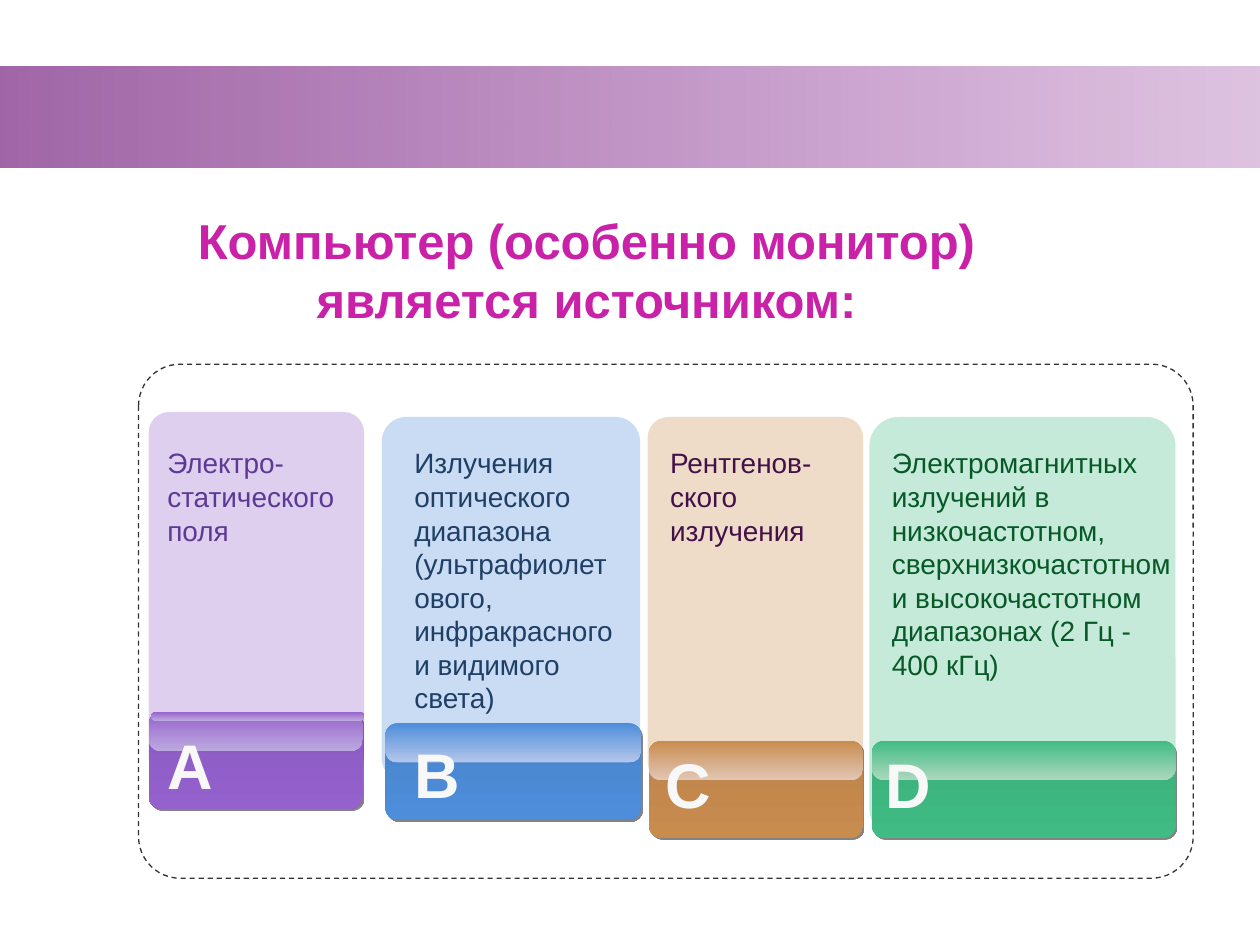
import pptx
import pptx.dml.color
import pptx.enum.dml
import pptx.enum.shapes
import pptx.enum.text
import pptx.oxml
import pptx.oxml.ns
import pptx.util
from pptx.util import Inches

ALIGN = pptx.enum.text.PP_ALIGN
ROUNDED = pptx.enum.shapes.MSO_SHAPE.ROUNDED_RECTANGLE
RECTANGLE = pptx.enum.shapes.MSO_SHAPE.RECTANGLE
SHADOW_XML = (
    '<a:effectLst %s><a:outerShdw dist="%d" dir="2700000" algn="ctr">'
    '<a:srgbClr val="%s"><a:alpha val="%d"/></a:srgbClr></a:outerShdw></a:effectLst>'
)

# Letter, text, text colour, alignment, card box, button box, text box,
# letter position, card colour, button shade, gloss tint
CARDS = [
    ("A", "Электро-статического поля", "5C3994", ALIGN.LEFT,
     (1.18, 3.27, 1.71, 2.9), (1.18, 5.65, 1.7, 0.77), (1.23, 3.49, 1.56, 0.91),
     (1.23, 5.72), "9461CD", "8B5BC0", "BDA8DE"),
    ("B", "Излучения оптического диапазона\v(ультрафиолетового, инфракрасного и видимого света)",
     "203F66", ALIGN.LEFT,
     (3.03, 3.31, 2.05, 2.9), (3.06, 5.74, 2.03, 0.77), (3.19, 3.49, 1.82, 2.26),
     (3.19, 5.79), "4E8DDA", "4984CC", "B4C6EA"),
    ("C", "Рентгенов-ского излучения", "431048", ALIGN.JUSTIFY,
     (5.14, 3.31, 1.71, 2.9), (5.15, 5.88, 1.7, 0.77), (5.22, 3.49, 1.56, 0.91),
     (5.18, 5.87), "C98C4F", "BC834A", "E1C6B4"),
    ("D", "Электромагнитных излучений в низкочастотном, сверхнизкочастотном\v"
     "и высокочастотном диапазонах (2 Гц - 400 кГц)", "075928", ALIGN.LEFT,
     (6.9, 3.31, 2.43, 3.34), (6.92, 5.88, 2.41, 0.77), (6.98, 3.49, 2.51, 1.99),
     (6.93, 5.87), "3FBB83", "3BAF7B", "ABD8BE"),
]


def color(value):
    return pptx.dml.color.RGBColor.from_string(value)


def set_alpha(fill_parent, percents):
    """Give each colour under the element its opacity in percent."""
    tag = pptx.oxml.ns.qn("a:srgbClr")
    for node, percent in zip(fill_parent.iter(tag), percents):
        alpha = node.makeelement(pptx.oxml.ns.qn("a:alpha"), {"val": str(percent * 1000)})
        node.append(alpha)


def shadow_effect(distance, shade, opacity):
    values = (pptx.oxml.ns.nsdecls("a"), pptx.util.Pt(distance), shade, opacity * 1000)
    return pptx.oxml.parse_xml(SHADOW_XML % values)


def add_panel(shapes, box, fill, preset=ROUNDED, radius=None, alpha=None, angle=270):
    """Add an unlined shape; a pair of colours makes a gradient."""
    panel = shapes.add_shape(preset, *map(Inches, box))
    panel.shadow.inherit = False
    panel.line.fill.background()
    if radius is not None:
        panel.adjustments[0] = radius
    if isinstance(fill, str):
        panel.fill.solid()
        panel.fill.fore_color.rgb = color(fill)
    else:
        panel.fill.gradient()
        panel.fill.gradient_angle = angle
        for stop, value in zip(panel.fill.gradient_stops, fill):
            stop.color.rgb = color(value)
    if alpha:
        set_alpha(panel._element.spPr, alpha)
    return panel


def write(box, text, size=16, ink="000000", bold=False, align=ALIGN.LEFT, shadow=False):
    frame = box.text_frame
    frame.word_wrap = True
    frame.auto_size = pptx.enum.text.MSO_AUTO_SIZE.SHAPE_TO_FIT_TEXT
    frame.vertical_anchor = pptx.enum.text.MSO_ANCHOR.TOP
    frame.text = text
    para = frame.paragraphs[0]
    para.alignment = align
    for span in para.runs:
        span.font.size = pptx.util.Pt(size)
        span.font.bold = bold
        span.font.color.rgb = color(ink)
        if shadow:
            span.font._element.append(shadow_effect(2, "000000", 100))
        span.font.name = "Arial"


def add_text(page, box, text, **style):
    write(page.shapes.add_textbox(*map(Inches, box)), text, **style)


def add_title(page, text):
    title = page.shapes.title
    title.left, title.top, title.width, title.height = map(Inches, (1.11, 1.62, 7.09, 1.04))
    write(title, text, size=28, ink="C921A7", bold=True, align=ALIGN.CENTER)


def add_frame(page):
    frame = add_panel(page.shapes, (1.1, 2.89, 8.37, 4.08), "FFFFFF", radius=0.081)
    frame.line.color.rgb = color("333333")
    frame.line.width = pptx.util.Pt(0.75)
    frame.line.dash_style = pptx.enum.dml.MSO_LINE.DASH


def add_button(page, box, base, shade, tint):
    """Add a shadowed button with a glossy upper part."""
    group = page.shapes.add_group_shape()
    button = add_panel(group.shapes, box, (shade, base), radius=0.127)
    effects = button._element.spPr.find(pptx.oxml.ns.qn("a:effectLst"))
    effects.getparent().replace(effects, shadow_effect(1.4, "080808", 50))
    add_panel(group.shapes, (*box[:3], 0.31), (base, tint), radius=0.308)


def main():
    deck = pptx.Presentation()
    deck.slide_width, deck.slide_height = Inches(10), Inches(7.5)
    page = deck.slides.add_slide(deck.slide_layouts[5])

    # Header band, title and dashed frame
    add_panel(page.shapes, (0, 0.53, 10, 0.8), ("741D7D", "85218F"),
              preset=RECTANGLE, alpha=(68, 27), angle=0)
    add_title(page, "Компьютер (особенно монитор) является источником:")
    add_frame(page)

    # Cards with their buttons, texts and letters
    for letter, text, ink, align, card, button, text_box, corner, base, shade, tint in CARDS:
        add_panel(page.shapes, card, base, radius=0.095, alpha=(30,))
        add_button(page, button, base, shade, tint)
        add_text(page, text_box, text, ink=ink, align=align)
        add_text(page, (*corner, 0.4, 0.7), letter, size=36, ink="F8F8F8",
                 bold=True, align=ALIGN.CENTER, shadow=True)

    # Highlight strip on the first button
    add_panel(page.shapes, (1.2, 5.65, 1.69, 0.07), ("9461CD", "BDA8DE"), radius=0.5)
    deck.save("out.pptx")


if __name__ == "__main__":
    main()
